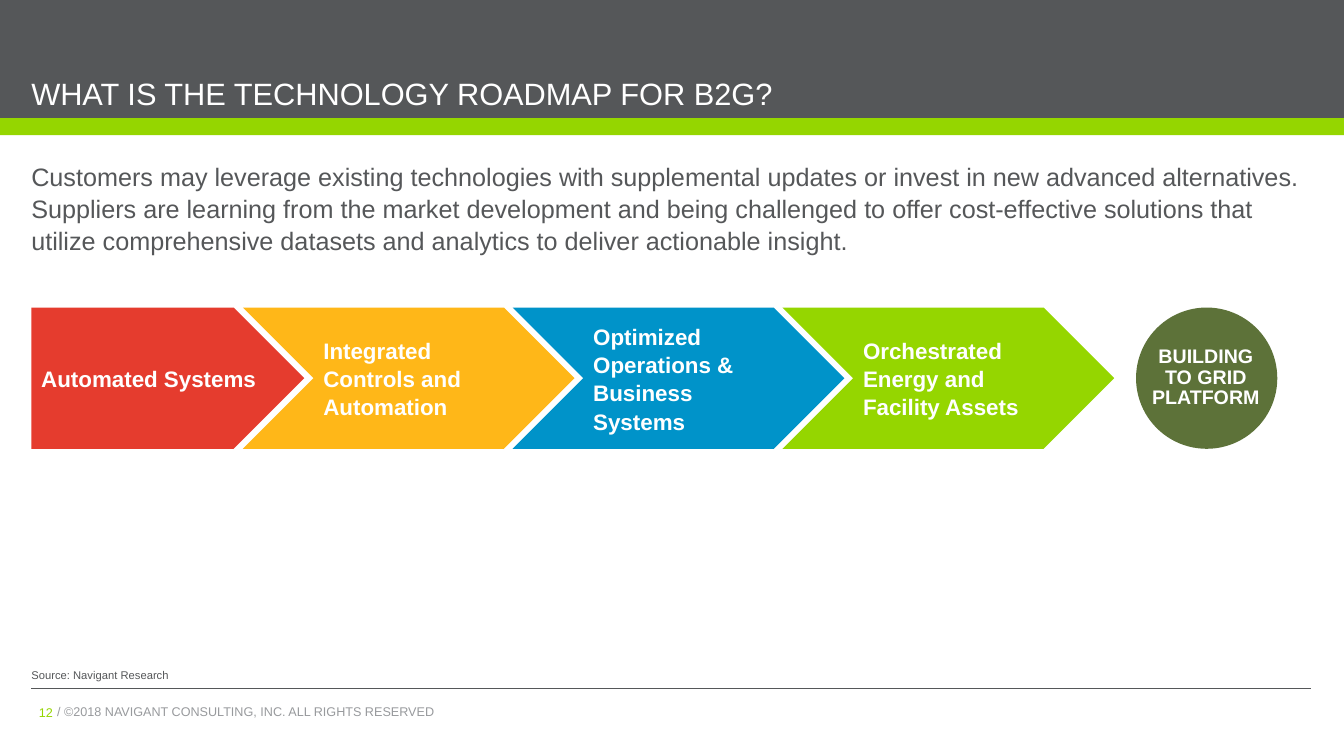
from pptx import Presentation
from pptx.dml.color import RGBColor
from pptx.enum.shapes import MSO_CONNECTOR, MSO_SHAPE
from pptx.enum.text import MSO_ANCHOR as Anchor, PP_ALIGN as Align
from pptx.oxml.ns import qn
from pptx.util import Cm, Pt
from lxml import etree

GREY = RGBColor(0x55, 0x57, 0x59)
LIGHT_GREY = RGBColor(0x98, 0x9A, 0x9D)
GREEN = RGBColor(0x95, 0xD6, 0x00)
RED = RGBColor(0xE5, 0x3C, 0x2E)
AMBER = RGBColor(0xFF, 0xB7, 0x18)
BLUE = RGBColor(0x00, 0x93, 0xC9)
OLIVE = RGBColor(0x5D, 0x72, 0x39)
WHITE = RGBColor(0xFF, 0xFF, 0xFF)

PAGE_WIDTH, PAGE_HEIGHT = 33.87, 19.05
MARGIN, CONTENT_WIDTH = 0.79, 32.26
STAGE_TOP, STAGE_HEIGHT = 7.75, 3.56

deck = Presentation()
deck.slide_width, deck.slide_height = Cm(PAGE_WIDTH), Cm(PAGE_HEIGHT)
page = deck.slides.add_slide(deck.slide_layouts[6])


def add_shape(kind, left, top, width, height, color):
    shape = page.shapes.add_shape(kind, Cm(left), Cm(top), Cm(width), Cm(height))
    shape.shadow.inherit = False
    shape.fill.solid()
    shape.fill.fore_color.rgb = color
    shape.line.fill.background()
    return shape


def write(box, text, size, color, bold=False, align=Align.LEFT,
          anchor=Anchor.TOP, spacing=1.0, inset=True):
    frame = box.text_frame
    frame.word_wrap = True
    frame.vertical_anchor = anchor
    if not inset:
        for side in ("left", "right", "top", "bottom"):
            setattr(frame, f"margin_{side}", 0)
    para = frame.paragraphs[0]
    para.alignment = align
    para.line_spacing = spacing
    span = para.add_run()
    span.text = text
    for name, value in {"name": "Arial", "size": Pt(size), "bold": bold}.items():
        setattr(span.font, name, value)
    span.font.color.rgb = color


# Header bands
add_shape(MSO_SHAPE.RECTANGLE, 0, 0, PAGE_WIDTH, 2.98, GREY)
add_shape(MSO_SHAPE.RECTANGLE, 0, 2.98, PAGE_WIDTH, 0.43, GREEN)

# Footer rule
rule = page.shapes.add_connector(
    MSO_CONNECTOR.STRAIGHT, Cm(MARGIN), Cm(17.36), Cm(MARGIN + CONTENT_WIDTH), Cm(17.36))
rule.line.color.rgb = GREY
rule.line.width = Pt(0.75)
etree.SubElement(rule._element.spPr, qn("a:effectLst"))

# Roadmap stages
stages = [
    ("Automated Systems", RED),
    ("Integrated Controls and Automation", AMBER),
    ("Optimized Operations & Business Systems", BLUE),
    ("Orchestrated Energy and Facility Assets", GREEN),
]
for index, (label, color) in enumerate(stages):
    if index == 0:
        kind, left, width = MSO_SHAPE.PENTAGON, MARGIN, 6.88
    else:
        kind, left, width = MSO_SHAPE.CHEVRON, 6.12 + 6.8 * (index - 1), 8.36
    stage = add_shape(kind, left, STAGE_TOP, width, STAGE_HEIGHT, color)
    write(stage, label, 16, WHITE, bold=True, anchor=Anchor.MIDDLE, spacing=1.05)

# Destination circle
add_shape(MSO_SHAPE.OVAL, 28.63, STAGE_TOP, STAGE_HEIGHT, STAGE_HEIGHT, OLIVE)

# Title, introduction, circle label, source and footer
texts = [
    ("WHAT IS THE TECHNOLOGY ROADMAP FOR B2G?",
     (MARGIN, 0, CONTENT_WIDTH, 2.82),
     dict(size=22, color=WHITE, anchor=Anchor.BOTTOM, inset=False)),
    ("Customers may leverage existing technologies with supplemental updates or invest "
     "in new advanced alternatives. Suppliers are learning from the market development "
     "and being challenged to offer cost-effective solutions that utilize comprehensive "
     "datasets and analytics to deliver actionable insight.",
     (MARGIN, 4.04, CONTENT_WIDTH, 2.46),
     dict(size=18, color=GREY, spacing=1.05, inset=False)),
    ("BUILDING TO GRID PLATFORM",
     (28.75, 8.64, 3.28, 1.8),
     dict(size=14, color=WHITE, bold=True, align=Align.CENTER, spacing=0.86)),
    ("Source: Navigant Research",
     (MARGIN, 16.84, CONTENT_WIDTH, 0.33),
     dict(size=8, color=GREY, anchor=Anchor.BOTTOM, inset=False)),
    ("12",
     (0.46, 17.68, 1.12, 0.58),
     dict(size=9, color=GREEN, align=Align.RIGHT, spacing=0.86)),
    ("/ ©2018 NAVIGANT CONSULTING, INC. ALL RIGHTS RESERVED",
     (1.19, 17.68, 16.18, 0.56),
     dict(size=9, color=LIGHT_GREY, spacing=0.86)),
]
for text, place, style in texts:
    box = page.shapes.add_textbox(*map(Cm, place))
    write(box, text, **style)

deck.save("out.pptx")
